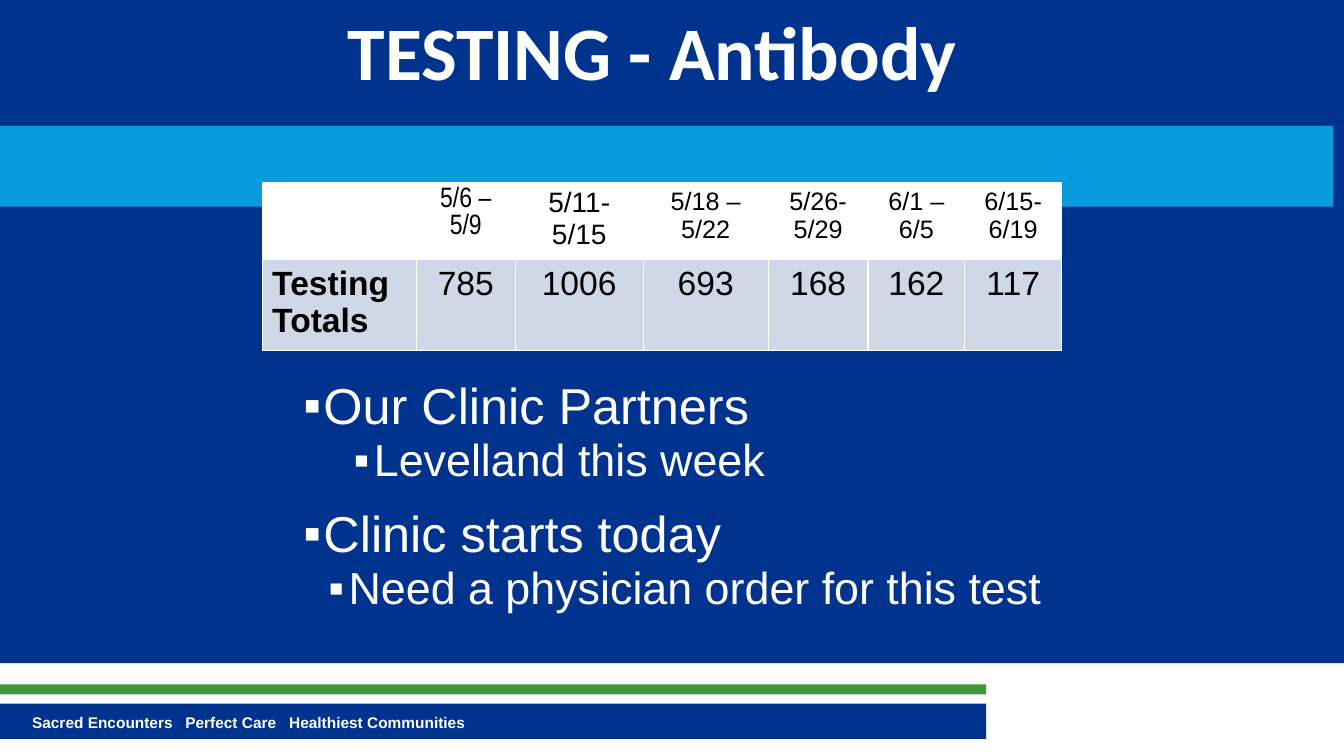
import dataclasses
import lxml.etree
import pptx
import pptx.dml.color
import pptx.enum.shapes
import pptx.enum.text
import pptx.oxml.ns
import pptx.util

Inches = pptx.util.Inches
Pt = pptx.util.Pt
qn = pptx.oxml.ns.qn
ALIGN = pptx.enum.text.PP_ALIGN


@dataclasses.dataclass(frozen=True)
class Theme:
    navy: str = "00338E"
    sky: str = "099BDD"
    green: str = "439539"
    white: str = "FFFFFF"
    black: str = "000000"
    pale: str = "D0D8E8"
    font: str = "Arial"
    narrow: str = "Arial Narrow"
    title_font: str = "Calibri"
    title: int = 54
    main: int = 36
    detail: int = 32
    total: int = 24
    date: int = 20
    small_date: int = 18
    footer: int = 11


def rgb(value):
    return pptx.dml.color.RGBColor.from_string(value)


def write(p, text, *, size, color, font, bold=False, align=ALIGN.LEFT,
          spacing=None, before=0, after=0):
    p.alignment = align
    p.line_spacing = spacing
    p.space_before = Pt(before)
    p.space_after = Pt(after)
    r = p.add_run()
    r.text = text
    r.font.size = Pt(size)
    r.font.name = font
    r.font.bold = bold
    r.font.color.rgb = rgb(color)


def add_bullet(p, color, margin, hanging=0.2):
    pPr = p._p.get_or_add_pPr()
    pPr.set("marL", str(Inches(margin)))
    pPr.set("indent", str(-Inches(hanging)))
    bu_clr = lxml.etree.SubElement(pPr, qn("a:buClr"))
    lxml.etree.SubElement(bu_clr, qn("a:srgbClr"), val=color)
    lxml.etree.SubElement(pPr, qn("a:buFont"), typeface="Arial")
    lxml.etree.SubElement(pPr, qn("a:buChar"), char="▪")


def add_tabs(p, stops):
    tabs = lxml.etree.SubElement(p._p.get_or_add_pPr(), qn("a:tabLst"))
    for stop in stops:
        lxml.etree.SubElement(tabs, qn("a:tab"), pos=str(Inches(stop)), algn="l")


def add_borders(cell, color, width=1):
    tcPr = cell._tc.get_or_add_tcPr()
    for side in ("a:lnL", "a:lnR", "a:lnT", "a:lnB"):
        ln = lxml.etree.SubElement(tcPr, qn(side), w=str(Pt(width)))
        fill = lxml.etree.SubElement(ln, qn("a:solidFill"))
        lxml.etree.SubElement(fill, qn("a:srgbClr"), val=color)


class SlideBuilder:
    def __init__(self, slide, theme):
        self.s = slide
        self.theme = theme

    def bar(self, x, y, w, h, color):
        sp = self.s.shapes.add_shape(
            pptx.enum.shapes.MSO_SHAPE.RECTANGLE,
            Inches(x), Inches(y), Inches(w), Inches(h))
        sp.shadow.inherit = False
        sp.fill.solid()
        sp.fill.fore_color.rgb = rgb(color)
        sp.line.fill.background()

    def text_frame(self, x, y, w, h):
        sp = self.s.shapes.add_textbox(Inches(x), Inches(y), Inches(w), Inches(h))
        tf = sp.text_frame
        tf.word_wrap = True
        return tf

    def title(self, text):
        t = self.theme
        tf = self.text_frame(1.12, 0, 10.7, 1.65)
        write(tf.paragraphs[0], text, size=t.title, color=t.white,
              font=t.title_font, bold=True, align=ALIGN.CENTER)

    def footer(self, phrases, stops):
        t = self.theme
        p = self.text_frame(0.22, 7.03, 8.33, 0.29).paragraphs[0]
        add_tabs(p, stops)
        write(p, "\t".join(phrases), size=t.footer, color=t.white,
              font=t.font, bold=True)

    def bullets(self, items):
        """Each item is (level, margin in inches, text, size, before, after)."""
        t = self.theme
        tf = self.text_frame(2.41, 3.73, 8.3, 2.75)
        for i, (level, margin, text, size, before, after) in enumerate(items):
            p = tf.add_paragraph() if i else tf.paragraphs[0]
            p.level = level
            add_bullet(p, t.white, margin)
            write(p, text, size=size, color=t.white, font=t.font,
                  spacing=0.9, before=before, after=after)

    def cell(self, cell, text, fill, **style):
        add_borders(cell, self.theme.white)
        cell.fill.solid()
        cell.fill.fore_color.rgb = rgb(fill)
        if text:
            write(cell.text_frame.paragraphs[0], text,
                  color=self.theme.black, **style)

    def totals_table(self, label, columns):
        """Each column is (width, dates, total, date size, date font)."""
        t = self.theme
        widths = [1.53] + [column[0] for column in columns]
        table = self.s.shapes.add_table(
            2, len(widths), Inches(2.6), Inches(1.81),
            Inches(sum(widths)), Inches(1.02)).table
        table.first_row = table.horz_banding = False
        for column, width in zip(table.columns, widths):
            column.width = Inches(width)
        for row, height in zip(table.rows, (0.5, 0.52)):
            row.height = Inches(height)
        self.cell(table.cell(0, 0), "", t.white)
        self.cell(table.cell(1, 0), label, t.pale, size=t.total,
                  font=t.font, bold=True)
        for i, (_, dates, total, size, font) in enumerate(columns, 1):
            self.cell(table.cell(0, i), dates, t.white, size=size,
                      font=font, align=ALIGN.CENTER)
            self.cell(table.cell(1, i), str(total), t.pale, size=t.total,
                      font=t.font, align=ALIGN.CENTER)


def main():
    prs = pptx.Presentation()
    prs.slide_width = Inches(13.33)
    prs.slide_height = Inches(7.5)
    t = Theme()
    s = SlideBuilder(prs.slides.add_slide(prs.slide_layouts[6]), t)

    s.bar(0, 0, 13.33, 6.58, t.navy)
    s.bar(-0.03, 6.98, 9.81, 0.35, t.navy)
    s.footer(["Sacred Encounters", "Perfect Care", "Healthiest Communities"],
             stops=(1.52, 2.55))
    s.bar(-0.03, 6.79, 9.81, 0.1, t.green)
    s.title("TESTING - Antibody")
    s.bar(-0.11, 1.25, 13.33, 0.8, t.sky)
    s.totals_table("Testing Totals", [
        (0.98, "5/6 – 5/9", 785, t.date, t.narrow),
        (1.27, "5/11-5/15", 1006, t.date, t.font),
        (1.24, "5/18 – 5/22", 693, t.small_date, t.font),
        (0.99, "5/26-5/29", 168, t.small_date, t.font),
        (0.96, "6/1 – 6/5", 162, t.small_date, t.font),
        (0.96, "6/15-6/19", 117, t.small_date, t.font),
    ])
    s.bullets([
        (2, 0.7, "Our Clinic Partners", t.main, 0, 0),
        (4, 1.2, "Levelland this week", t.detail, 2, 4),
        (2, 0.7, "Clinic starts today", t.main, 12, 0),
        (3, 0.95, "Need a physician order for this test", t.detail, 2, 4),
    ])
    prs.save("out.pptx")


if __name__ == "__main__":
    main()
